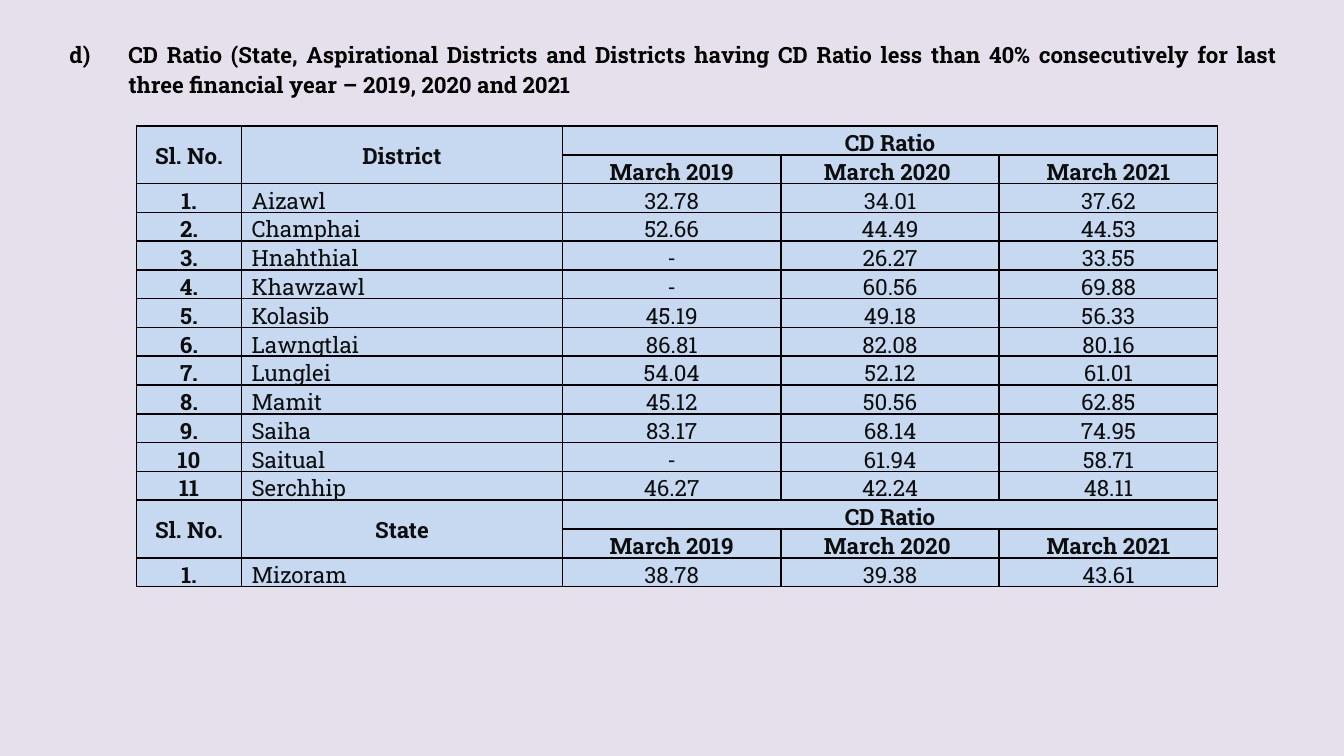
import pptx
import pptx.dml.color
import pptx.enum.text
import pptx.oxml
import pptx.oxml.ns
import pptx.util
import lxml.etree

Pt = pptx.util.Pt
ALIGN = pptx.enum.text.PP_ALIGN
ANCHOR = pptx.enum.text.MSO_ANCHOR

FONT = "Roboto Slab"
HEADING = (
    "CD Ratio (State, Aspirational Districts and Districts having CD Ratio less than 40% "
    "consecutively for last three financial year – 2019, 2020 and 2021"
)
YEARS = ["March 2019", "March 2020 ", "March 2021"]
DISTRICTS = [
    ("1.", "Aizawl", "32.78", "34.01", "37.62"),
    ("2.", "Champhai", "52.66", "44.49", "44.53"),
    ("3.", "Hnahthial", "-", "26.27", "33.55"),
    ("4.", "Khawzawl", "-", "60.56", "69.88"),
    ("5.", "Kolasib", "45.19", "49.18", "56.33"),
    ("6.", "Lawngtlai", "86.81", "82.08", "80.16"),
    ("7.", "Lunglei", "54.04", "52.12", "61.01"),
    ("8.", "Mamit", "45.12", "50.56", "62.85"),
    ("9.", "Saiha", "83.17", "68.14", "74.95"),
    ("10", "Saitual", "-", "61.94", "58.71"),
    ("11", "Serchhip", "46.27", "42.24", "48.11"),
]
STATES = [("1.", "Mizoram", "38.78", "39.38", "43.61")]
COLUMN_WIDTHS = [56.2, 172, 117, 117, 117]
ROW_HEIGHT = 15.4


def color(value):
    return pptx.dml.color.RGBColor.from_string(value)


def format_text(para, text, align, spacing, shade, bold):
    para.text = text
    para.alignment = align
    para.line_spacing = spacing
    para.space_after = Pt(8)
    for span in para.runs:
        span.font.name = FONT
        span.font.size = Pt(12)
        span.font.bold = bold
        span.font.color.rgb = color(shade)


def add_heading(page):
    box = page.shapes.title
    box.left, box.top, box.width, box.height = Pt(16.5), Pt(16.5), Pt(675.5), Pt(40)
    frame = box.text_frame
    frame.word_wrap = True
    frame.auto_size = pptx.enum.text.MSO_AUTO_SIZE.SHAPE_TO_FIT_TEXT
    frame.vertical_anchor = ANCHOR.MIDDLE
    para = frame.paragraphs[0]
    format_text(para, HEADING, ALIGN.JUSTIFY, 1.1, "000000", True)
    # Lettered list item that starts at d)
    properties = para._p.get_or_add_pPr()
    properties.set("marL", str(Pt(45)))
    properties.set("indent", str(Pt(-31.5)))
    number = lxml.etree.SubElement(properties, pptx.oxml.ns.qn("a:buAutoNum"))
    number.set("type", "alphaLcParenR")
    number.set("startAt", "4")


def add_borders(cell):
    properties = cell._tc.get_or_add_tcPr()
    for index, side in enumerate(["lnL", "lnR", "lnT", "lnB"]):
        line = pptx.oxml.parse_xml(
            f'<a:{side} {pptx.oxml.ns.nsdecls("a")} w="{Pt(1)}">'
            f'<a:solidFill><a:srgbClr val="000000"/></a:solidFill></a:{side}>'
        )
        properties.insert(index, line)


def style_cell(cell):
    cell.fill.solid()
    cell.fill.fore_color.rgb = color("C6D9F1")
    cell.margin_left = cell.margin_right = Pt(5.4)
    cell.margin_top = cell.margin_bottom = 0
    add_borders(cell)


def write_cell(cell, text, bold=False, align=ALIGN.CENTER, anchor=ANCHOR.TOP):
    cell.vertical_anchor = anchor
    format_text(cell.text_frame.paragraphs[0], text, align, 1.07, "0D0D0D", bold)


def add_section(table, top, label, records, name_anchor):
    """Write a two-row header and its records; return the next free row."""
    for column, text in enumerate(["Sl. No.", label]):
        table.cell(top, column).merge(table.cell(top + 1, column))
        write_cell(table.cell(top, column), text, bold=True, anchor=ANCHOR.MIDDLE)
    table.cell(top, 2).merge(table.cell(top, 4))
    write_cell(table.cell(top, 2), "CD Ratio", bold=True)
    for column, year in enumerate(YEARS, start=2):
        write_cell(table.cell(top + 1, column), year, bold=True)

    for row, (serial, name, *ratios) in enumerate(records, start=top + 2):
        write_cell(table.cell(row, 0), serial, bold=True)
        write_cell(table.cell(row, 1), name, align=ALIGN.JUSTIFY, anchor=name_anchor)
        for column, ratio in enumerate(ratios, start=2):
            write_cell(table.cell(row, column), ratio)
    return top + 2 + len(records)


def add_ratio_table(page):
    row_count = len(DISTRICTS) + len(STATES) + 4
    table = page.shapes.add_table(
        row_count, len(COLUMN_WIDTHS), Pt(73.2), Pt(67.5),
        Pt(sum(COLUMN_WIDTHS)), Pt(ROW_HEIGHT * row_count),
    ).table
    for column, width in zip(table.columns, COLUMN_WIDTHS):
        column.width = Pt(width)
    for row in table.rows:
        row.height = Pt(ROW_HEIGHT)
    for cell in table.iter_cells():
        style_cell(cell)
    next_row = add_section(table, 0, "District", DISTRICTS, ANCHOR.BOTTOM)
    add_section(table, next_row, "State", STATES, ANCHOR.TOP)


def main():
    deck = pptx.Presentation()
    deck.slide_width, deck.slide_height = Pt(720), Pt(405)
    page = deck.slides.add_slide(deck.slide_layouts[5])
    page.background.fill.solid()
    page.background.fill.fore_color.rgb = color("E6E0EC")
    add_heading(page)
    add_ratio_table(page)
    deck.save("out.pptx")


if __name__ == "__main__":
    main()
